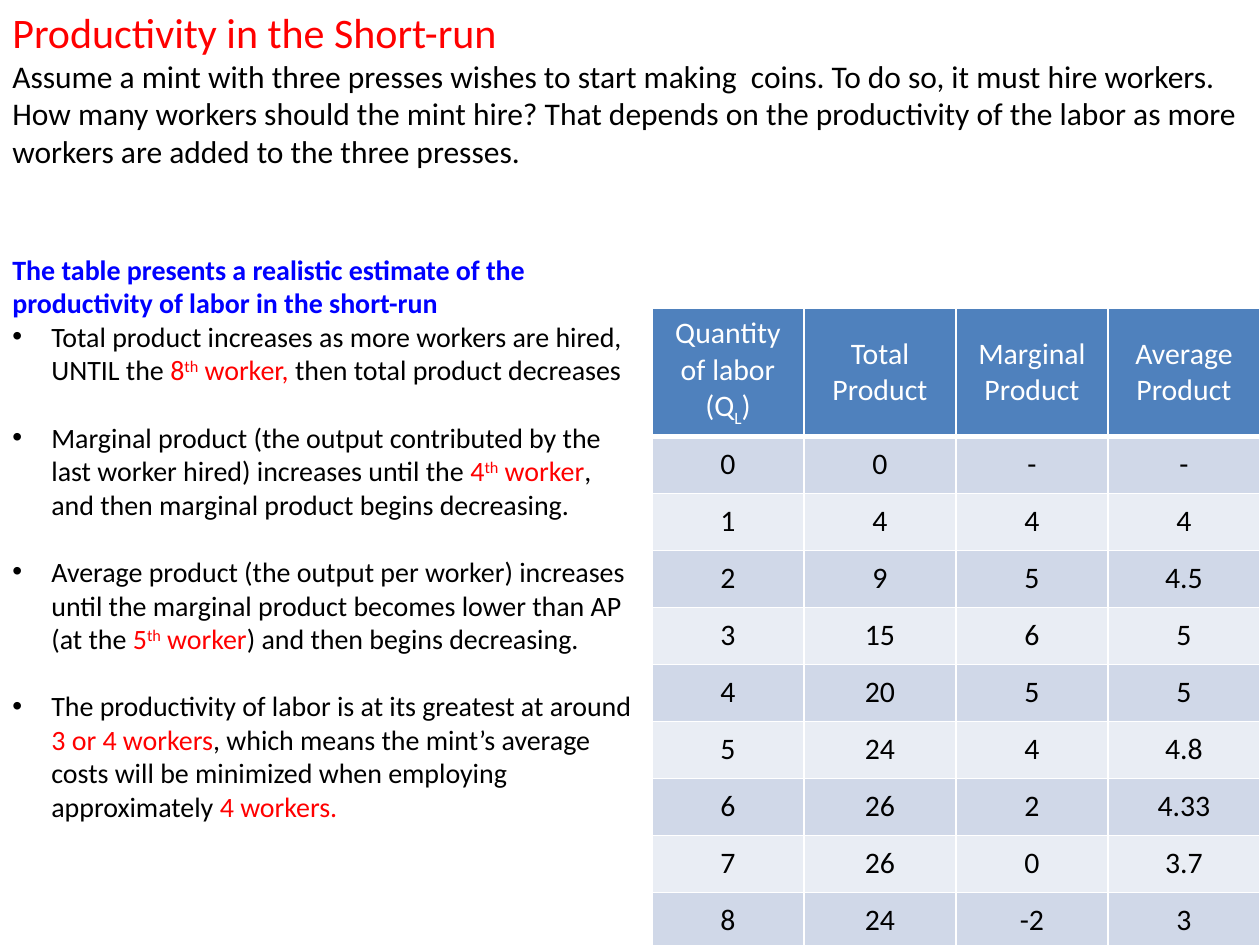
from lxml import etree
from pptx import Presentation
from pptx import util as u
from pptx.dml.color import RGBColor
from pptx.enum import text
from pptx.oxml import ns

PX = 914400 // 126
FONT = "Calibri"
RED = RGBColor(0xFF, 0x00, 0x00)
BLUE = RGBColor(0x00, 0x00, 0xFF)
BLACK = RGBColor(0x00, 0x00, 0x00)
WHITE = RGBColor(0xFF, 0xFF, 0xFF)
HEADER_FILL = RGBColor(0x4F, 0x81, 0xBD)
BAND_FILLS = [RGBColor(0xD0, 0xD8, 0xE8), RGBColor(0xE9, 0xED, 0xF4)]

SUPERSCRIPT, SUBSCRIPT = 30, -25

TITLE = "Productivity in the Short-run"
INTRO = (
    "Assume a mint with three presses wishes to start making  coins. "
    "To do so, it must hire workers. How many workers should the mint hire? "
    "That depends on the productivity of the labor as more workers are added "
    "to the three presses."
)
LEAD = "The table presents a realistic estimate of the productivity of labor in the short-run"
BULLETS = [
    [("Total product increases as more workers are hired, UNTIL the ",),
     ("8", RED), ("th", RED, SUPERSCRIPT), (" worker, ", RED),
     ("then total product decreases",)],
    [("Marginal product (the output contributed by the last worker hired) increases until the ",),
     ("4", RED), ("th", RED, SUPERSCRIPT), (" worker", RED),
     (", and then marginal product begins decreasing.",)],
    [("Average product (the output per worker) increases until the marginal product "
      "becomes lower than AP (at the ",),
     ("5", RED), ("th", RED, SUPERSCRIPT), (" worker", RED),
     (") and then begins decreasing.",)],
    [("The productivity of labor is at its greatest at around ",),
     ("3 or 4 workers", RED),
     (", which means the mint’s average costs will be minimized when employing approximately ",),
     ("4 workers.", RED)],
]
HEADERS = [
    [("Quantity of labor (Q",), ("L", WHITE, SUBSCRIPT), (")",)],
    "Total Product", "Marginal Product", "Average Product",
]
ROWS = [
    ("0", "0", "-", "-"),
    ("1", "4", "4", "4"),
    ("2", "9", "5", "4.5"),
    ("3", "15", "6", "5"),
    ("4", "20", "5", "5"),
    ("5", "24", "4", "4.8"),
    ("6", "26", "2", "4.33"),
    ("7", "26", "0", "3.7"),
    ("8", "24", "-2", "3"),
]

INTRO_BOX = (0, 0, 1260, 178)
NOTES_BOX = (0, 246, 652, 590)
TABLE_LEFT, TABLE_TOP = 652, 308
COLUMN_WIDTH, HEADER_HEIGHT, ROW_HEIGHT = 152, 88, 57
BULLET_INDENT = 39
BULLET_GAP = 19.2


def write(paragraph, content, size, color=BLACK, bold=False, align=None):
    if align is not None:
        paragraph.alignment = align
    runs = [(content,)] if isinstance(content, str) else content
    for words, *style in runs:
        run = paragraph.add_run()
        run.text = words
        run.font.name = FONT
        run.font.size = u.Pt(size)
        run.font.bold = bold
        run.font.color.rgb = style[0] if style else color
        if len(style) > 1:
            run.font._element.set("baseline", str(style[1] * 1000))


def add_bullet(paragraph):
    properties = paragraph._p.get_or_add_pPr()
    properties.set("marL", str(BULLET_INDENT * PX))
    properties.set("indent", str(-BULLET_INDENT * PX))
    etree.SubElement(properties, ns.qn("a:buFont"), typeface="Arial")
    etree.SubElement(properties, ns.qn("a:buChar"), char="•")


def add_text_frame(slide, box):
    frame = slide.shapes.add_textbox(*(length * PX for length in box)).text_frame
    frame.word_wrap = True
    return frame


def set_borders(cell, bottom_width):
    properties = cell._tc.get_or_add_tcPr()
    for side, width in zip("LRTB", (1, 1, 1, bottom_width)):
        line = etree.SubElement(properties, ns.qn("a:ln" + side), w=str(u.Pt(width)))
        fill = etree.SubElement(line, ns.qn("a:solidFill"))
        etree.SubElement(fill, ns.qn("a:srgbClr"), val=str(WHITE))


def add_intro(slide):
    frame = add_text_frame(slide, INTRO_BOX)
    write(frame.paragraphs[0], TITLE, 24, color=RED)
    write(frame.add_paragraph(), INTRO, 18)


def add_notes(slide):
    frame = add_text_frame(slide, NOTES_BOX)
    write(frame.paragraphs[0], LEAD, 16, color=BLUE, bold=True)
    for index, bullet in enumerate(BULLETS):
        paragraph = frame.add_paragraph()
        paragraph.space_before = u.Pt(BULLET_GAP if index else 0)
        add_bullet(paragraph)
        write(paragraph, bullet, 16)


def add_product_table(slide):
    grid = [HEADERS, *ROWS]
    heights = [HEADER_HEIGHT] + [ROW_HEIGHT] * len(ROWS)
    table = slide.shapes.add_table(
        len(grid), len(HEADERS), TABLE_LEFT * PX, TABLE_TOP * PX,
        COLUMN_WIDTH * len(HEADERS) * PX, sum(heights) * PX,
    ).table
    table.first_row = table.horz_banding = False
    for column in table.columns:
        column.width = COLUMN_WIDTH * PX
    for index, (row, height, values) in enumerate(zip(table.rows, heights, grid)):
        row.height = height * PX
        is_header = index == 0
        for cell, value in zip(row.cells, values):
            cell.vertical_anchor = text.MSO_ANCHOR.MIDDLE
            cell.margin_left = cell.margin_right = u.Inches(0.1)
            cell.margin_top = cell.margin_bottom = u.Inches(0.06)
            set_borders(cell, 3 if is_header else 1)
            cell.fill.solid()
            cell.fill.fore_color.rgb = HEADER_FILL if is_header else BAND_FILLS[(index - 1) % 2]
            write(cell.text_frame.paragraphs[0], value, 17,
                  color=WHITE if is_header else BLACK, align=text.PP_ALIGN.CENTER)


def main():
    presentation = Presentation()
    presentation.slide_width = u.Inches(10)
    presentation.slide_height = u.Inches(7.5)
    slide = presentation.slides.add_slide(presentation.slide_layouts[6])
    add_product_table(slide)
    add_intro(slide)
    add_notes(slide)
    presentation.save("out.pptx")


if __name__ == "__main__":
    main()
